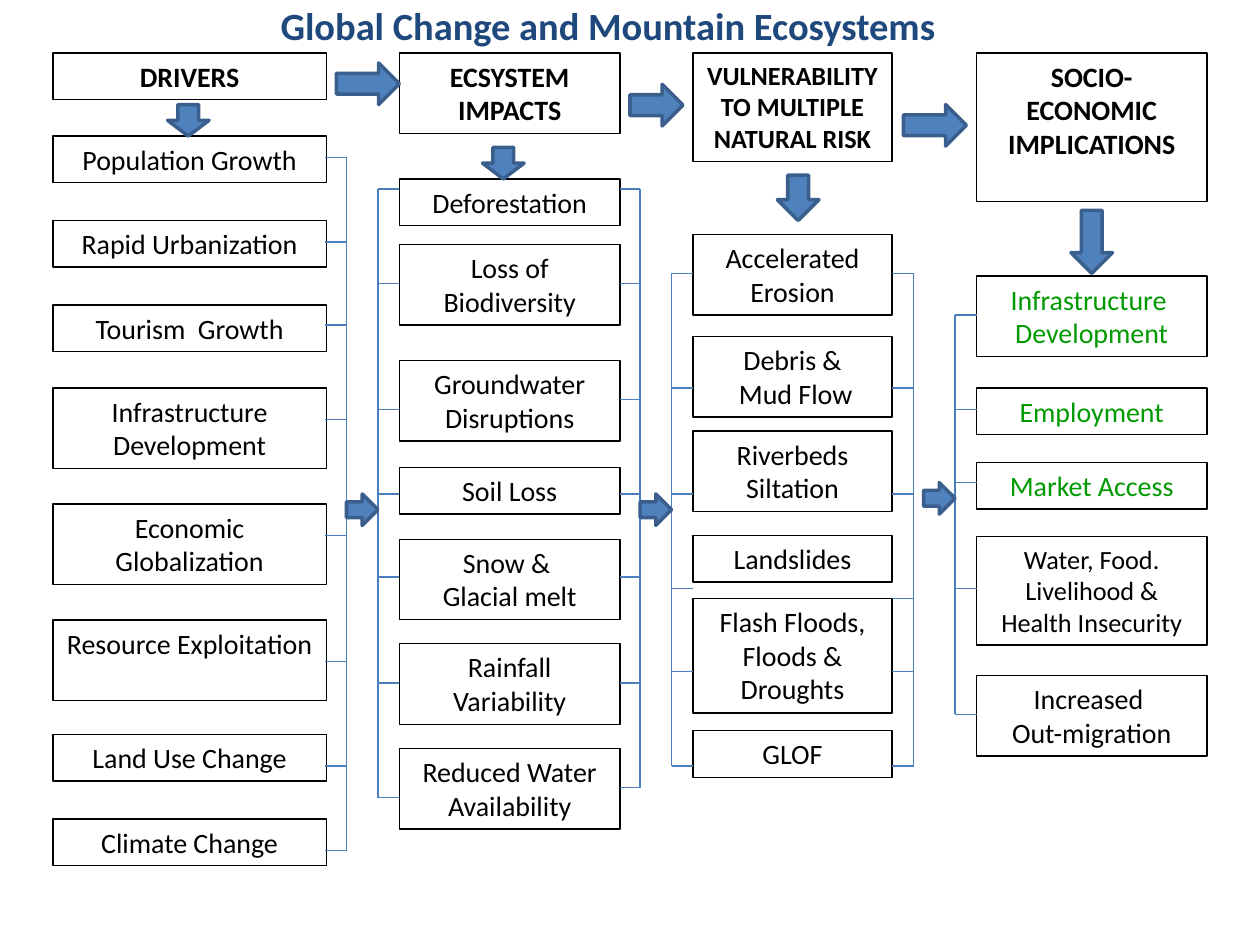
from pptx import Presentation
from pptx.dml.color import RGBColor
from pptx.enum.shapes import MSO_CONNECTOR as LINK, MSO_SHAPE as SHAPE
from pptx.enum.text import MSO_ANCHOR as ANCHOR, PP_ALIGN as ALIGN
from pptx.oxml.ns import qn
from pptx.util import Inches, Pt
from lxml.etree import SubElement

INK = {"black": "000000", "green": "009900", "title": "1F497D",
       "wire": "4B7EBC", "arrow": "4F81BD", "edge": "3A5F8C"}
RGB = {name: RGBColor.from_string(code) for name, code in INK.items()}

deck = Presentation()
deck.slide_width, deck.slide_height = Inches(10), Inches(7.5)
slide = deck.slides.add_slide(deck.slide_layouts[6])
shapes = slide.shapes


def write(shape, text, size, color, bold=False):
    """Fill a shape with centred text, one paragraph per line."""
    frame = shape.text_frame
    frame.word_wrap = True
    frame.vertical_anchor = ANCHOR.TOP
    frame.text = text
    for para in frame.paragraphs:
        para.alignment = ALIGN.CENTER
        font = para.font
        font.name, font.size, font.bold = "Calibri", Pt(size), bold
        font.color.rgb = RGB[color]


def wire(x1, y1, x2, y2):
    line = shapes.add_connector(LINK.STRAIGHT, *map(Inches, (x1, y1, x2, y2)))
    line.line.color.rgb = RGB["wire"]
    line.line.width = Pt(0.75)
    SubElement(line._element.spPr, qn("a:effectLst"))


# Box height by number of text lines, at 16 and at 15 points
TALL = {16: {1: 0.37, 2: 0.64, 3: 0.91, 4: 1.18}, 15: {3: 0.86}}

# Column: left, width, boxes (top, lines, text, size, color, bold)
columns = [
    (0.42, 2.17, [
        (0.42, 1, "DRIVERS", 16, "black", True),
        (1.08, 1, "Population Growth"),
        (1.75, 1, "Rapid Urbanization"),
        (2.42, 1, "Tourism  Growth"),
        (3.08, 2, "Infrastructure Development"),
        (4, 2, "Economic\nGlobalization"),
        (4.92, 2, "Resource Exploitation"),
        (5.83, 1, "Land Use Change"),
        (6.5, 1, "Climate Change")]),
    (3.17, 1.75, [
        (0.42, 2, "ECSYSTEM IMPACTS", 16, "black", True),
        (1.42, 1, "Deforestation"),
        (1.94, 2, "Loss of Biodiversity"),
        (2.86, 2, "Groundwater Disruptions"),
        (3.71, 1, "Soil Loss"),
        (4.28, 2, "Snow & \nGlacial melt"),
        (5.11, 2, "Rainfall Variability"),
        (5.94, 2, "Reduced Water Availability")]),
    (5.5, 1.58, [
        (0.42, 3, "VULNERABILITY\nTO MULTIPLE\nNATURAL RISK", 15, "black", True),
        (1.86, 2, "Accelerated Erosion"),
        (2.67, 2, "Debris &\n Mud Flow"),
        (3.42, 2, "Riverbeds Siltation"),
        (4.25, 1, "Landslides"),
        (4.75, 3, "Flash Floods, Floods & Droughts"),
        (5.8, 1, "GLOF")]),
    (7.75, 1.83, [
        (0.42, 4, "SOCIO-ECONOMIC IMPLICATIONS", 16, "black", True),
        (2.19, 2, "Infrastructure \nDevelopment", 16, "green"),
        (3.08, 1, "Employment", 16, "green"),
        (3.67, 1, "Market Access", 16, "green"),
        (4.26, 3, "Water, Food. Livelihood & Health Insecurity", 15),
        (5.36, 2, "Increased \nOut-migration")]),
]
for left, width, boxes in columns:
    for top, lines, text, *style in boxes:
        size, color, bold = style + [16, "black", False][len(style):]
        box = shapes.add_shape(SHAPE.RECTANGLE, *map(
            Inches, (left, top, width, TALL[size][lines])))
        box.shadow.inherit = False
        box.fill.background()
        box.line.color.rgb = RGB["black"]
        box.line.width = Pt(0.75)
        write(box, text, size, color, bold)

# Bracket: x of the trunk, x of the box side, heights of the branches
brackets = [
    (2.75, 2.58, [1.25, 1.92, 2.58, 3.33, 4.25, 5.25, 6.08, 6.75]),
    (3, 3.17, [1.5, 2.25, 3.25, 3.92, 4.58, 5.42, 6.33]),
    (5.08, 4.92, [1.5, 2.25, 3.17, 3.92, 4.58, 5.42, 6.25]),
    (5.33, 5.5, [2.17, 3.08, 3.92, 4.67, 5.33, 6.08]),
    (7.25, 7.08, [2.17, 3.08, 3.92, 4.75, 5.33, 6.08]),
    (7.58, 7.75, [2.5, 3.25, 3.83, 4.67, 5.67]),
]
for trunk, side, levels in brackets:
    wire(trunk, levels[0], trunk, levels[-1])
    for y in levels:
        wire(min(trunk, side), y, max(trunk, side), y)

arrows = {
    SHAPE.RIGHT_ARROW: [
        (2.75, 3.92, 0.25, 0.25), (5.08, 3.92, 0.25, 0.25),
        (7.33, 3.83, 0.25, 0.25), (2.67, 0.5, 0.5, 0.33),
        (5, 0.67, 0.42, 0.33), (7.17, 0.83, 0.5, 0.33)],
    SHAPE.DOWN_ARROW: [
        (8.5, 1.67, 0.33, 0.5), (6.17, 1.39, 0.33, 0.36),
        (3.83, 1.17, 0.33, 0.25), (1.33, 0.83, 0.33, 0.25)],
}
for kind, places in arrows.items():
    for place in places:
        arrow = shapes.add_shape(kind, *map(Inches, place))
        arrow.shadow.inherit = False
        arrow.fill.solid()
        arrow.fill.fore_color.rgb = RGB["arrow"]
        arrow.line.color.rgb = RGB["edge"]
        arrow.line.width = Pt(2)

title = shapes.add_textbox(*map(Inches, (0.24, -0.03, 9.17, 0.5)))
write(title, "Global Change and Mountain Ecosystems", 22, "title", True)

deck.save("out.pptx")
